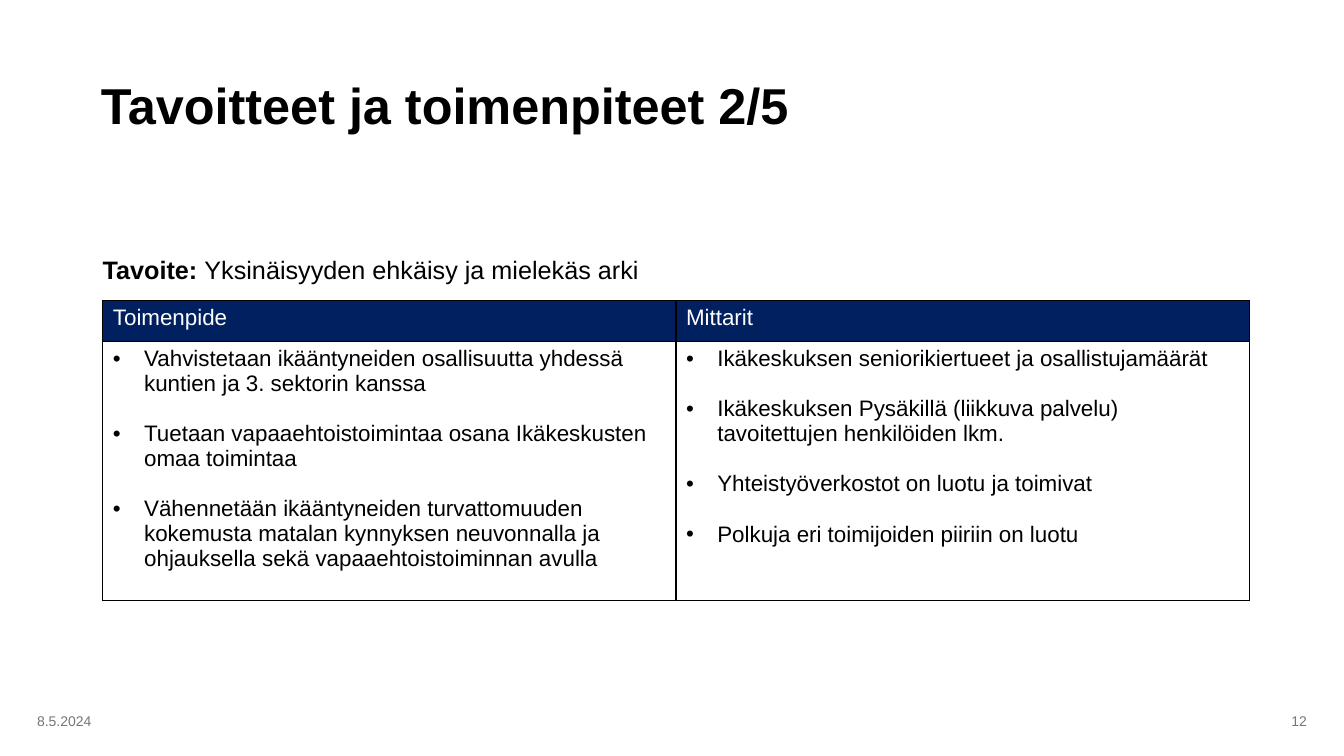
from lxml import etree
from pptx import Presentation
from pptx.dml.color import RGBColor
from pptx.enum.text import MSO_ANCHOR, PP_ALIGN
from pptx.oxml.ns import qn
from pptx.util import Inches, Pt

MIDDLE, TOP = MSO_ANCHOR.MIDDLE, MSO_ANCHOR.TOP
LEFT, RIGHT = PP_ALIGN.LEFT, PP_ALIGN.RIGHT
BLACK = RGBColor(0x00, 0x00, 0x00)
WHITE = RGBColor(0xFF, 0xFF, 0xFF)
NAVY = RGBColor(0x00, 0x20, 0x60)
GREY = RGBColor(0x76, 0x76, 0x76)

COLUMNS = {
    "Toimenpide": [
        "Vahvistetaan ikääntyneiden osallisuutta yhdessä kuntien ja 3. sektorin kanssa",
        "Tuetaan vapaaehtoistoimintaa osana Ikäkeskusten omaa toimintaa",
        "Vähennetään ikääntyneiden turvattomuuden kokemusta matalan kynnyksen "
        "neuvonnalla ja ohjauksella sekä vapaaehtoistoiminnan avulla",
    ],
    "Mittarit": [
        "Ikäkeskuksen seniorikiertueet ja osallistujamäärät",
        "Ikäkeskuksen Pysäkillä (liikkuva palvelu) tavoitettujen henkilöiden lkm.",
        "Yhteistyöverkostot on luotu ja toimivat",
        "Polkuja eri toimijoiden piiriin on luotu",
    ],
}


class SlideBuilder:
    """Adds consistently styled elements to one slide."""

    font = "Arial"
    table_size = 16

    def __init__(self, prs):
        self.s = prs.slides.add_slide(prs.slide_layouts[5])

    def style(self, r, size, color=BLACK, bold=False):
        r.font.name = self.font
        r.font.size = Pt(size)
        r.font.bold = bold
        r.font.color.rgb = color

    def place(self, sp, x, y, w, h):
        sp.left, sp.top, sp.width, sp.height = (Inches(v) for v in (x, y, w, h))

    def title(self, text, x, y, w, h):
        sp = self.s.shapes.title
        self.place(sp, x, y, w, h)
        tf = sp.text_frame
        tf.text = text
        tf.word_wrap = True
        tf.vertical_anchor = MIDDLE
        tf.margin_left = tf.margin_right = Inches(0.08)
        tf.margin_top = tf.margin_bottom = Inches(0.04)
        p = tf.paragraphs[0]
        p.alignment = LEFT
        p.line_spacing = 0.9
        self.style(p.runs[0], 36, bold=True)

    def text(self, parts, x, y, w, h, size, color=BLACK, align=LEFT, anchor=TOP):
        sp = self.s.shapes.add_textbox(*(Inches(v) for v in (x, y, w, h)))
        tf = sp.text_frame
        tf.word_wrap = True
        tf.vertical_anchor = anchor
        p = tf.paragraphs[0]
        p.alignment = align
        for content, bold in parts:
            r = p.add_run()
            r.text = content
            self.style(r, size, color, bold)

    def borders(self, cell):
        tcPr = cell._tc.get_or_add_tcPr()
        for side in ("lnL", "lnR", "lnT", "lnB"):
            ln = etree.SubElement(tcPr, qn(f"a:{side}"), w=str(Pt(1)))
            fill = etree.SubElement(ln, qn("a:solidFill"))
            etree.SubElement(fill, qn("a:srgbClr"), val=str(BLACK))

    def bullet(self, p):
        pPr = p._p.get_or_add_pPr()
        pPr.set("marL", str(Inches(0.31)))
        pPr.set("indent", str(-Inches(0.31)))
        etree.SubElement(pPr, qn("a:buFont"), typeface=self.font)
        etree.SubElement(pPr, qn("a:buChar"), char="•")

    def table(self, columns, x, y, w, row_heights):
        size = (Inches(v) for v in (x, y, w, sum(row_heights)))
        table = self.s.shapes.add_table(2, len(columns), *size).table
        for row, height in zip(table.rows, row_heights):
            row.height = Inches(height)
        for col, (heading, items) in enumerate(columns.items()):
            head, body = table.cell(0, col), table.cell(1, col)
            for cell in (head, body):
                self.borders(cell)
            head.fill.solid()
            head.fill.fore_color.rgb = NAVY
            body.fill.background()
            head.text = heading
            self.style(head.text_frame.paragraphs[0].runs[0], self.table_size, WHITE)
            body.text = "\n".join(items)
            for i, p in enumerate(body.text_frame.paragraphs):
                self.bullet(p)
                if i:
                    p.space_before = Pt(18)
                self.style(p.runs[0], self.table_size)


def main():
    prs = Presentation()
    prs.slide_width, prs.slide_height = Inches(13.33), Inches(7.5)
    slide = SlideBuilder(prs)
    slide.title("Tavoitteet ja toimenpiteet 2/5", 0.92, 0.4, 11.02, 1.35)
    slide.text([("Tavoite: ", True), ("Yksinäisyyden ehkäisy ja mielekäs arki", False)],
               0.92, 2.47, 8.94, 0.4, 18)
    slide.table(COLUMNS, 1.02, 2.98, 11.37, (0.41, 2.57))
    slide.text([("8.5.2024", False)], 0.27, 6.95, 1.5, 0.4, 10, GREY, anchor=MIDDLE)
    slide.text([("12", False)], 10.06, 6.95, 3, 0.4, 10, GREY, RIGHT, MIDDLE)
    prs.save("out.pptx")


if __name__ == "__main__":
    main()
